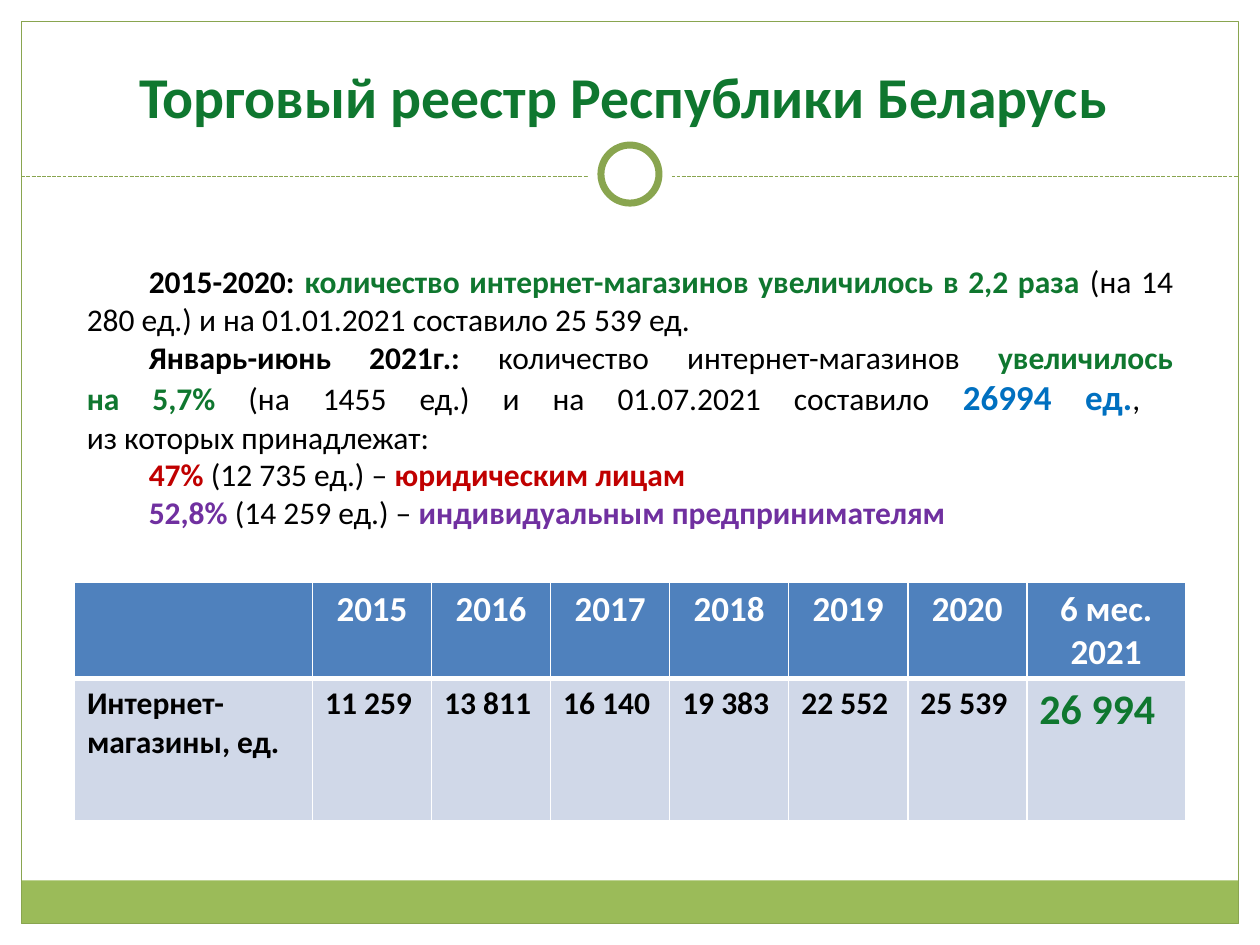
from lxml.etree import SubElement
from pptx import Presentation
from pptx.dml.color import RGBColor
from pptx.enum.dml import MSO_LINE
from pptx.enum.shapes import MSO_CONNECTOR, MSO_SHAPE
from pptx.enum.text import MSO_ANCHOR, MSO_AUTO_SIZE, PP_ALIGN
from pptx.oxml import parse_xml
from pptx.oxml.ns import nsdecls, qn
from pptx.util import Cm, Pt

COLORS = {
    "white": "FFFFFF", "black": "000000", "olive": "9BBB59", "frame": "89A54F",
    "green": "0F772F", "blue": "0070C0", "red": "C00000", "purple": "7030A0",
    "header": "4F81BD", "body": "D0D8E8",
}


def rgb(name):
    return RGBColor.from_string(COLORS[name])


class SlideBuilder:
    font_name = "Calibri"

    def __init__(self, slide):
        self.slide = slide

    def style_font(self, font, size, color, bold):
        font.name, font.size, font.bold = self.font_name, Pt(size), bold
        font.color.rgb = rgb(color)

    def shape(self, kind, box, fill=None, line=None, width=0.75):
        shape = self.slide.shapes.add_shape(kind, *map(Cm, box))
        shape.shadow.inherit = False
        if fill:
            shape.fill.solid()
            shape.fill.fore_color.rgb = rgb(fill)
        else:
            shape.fill.background()
        if line:
            shape.line.color.rgb = rgb(line)
            shape.line.width = Pt(width)
        else:
            shape.line.fill.background()

    def dashed_line(self, x1, y1, x2, y2):
        line = self.slide.shapes.add_connector(
            MSO_CONNECTOR.STRAIGHT, Cm(x1), Cm(y1), Cm(x2), Cm(y2))
        line.line.color.rgb = rgb("frame")
        line.line.width = Pt(0.75)
        line.line.dash_style = MSO_LINE.SQUARE_DOT
        SubElement(line._element.spPr, qn("a:effectLst"))

    def text_frame(self, box):
        frame = self.slide.shapes.add_textbox(*map(Cm, box)).text_frame
        frame.word_wrap = True
        return frame

    def title(self, text, box):
        frame = self.text_frame(box)
        frame.vertical_anchor = MSO_ANCHOR.BOTTOM
        paragraph = frame.paragraphs[0]
        paragraph.text = text
        paragraph.alignment = PP_ALIGN.CENTER
        self.style_font(paragraph.font, 33, "green", True)

    def body_text(self, paragraphs, box):
        """Each run is (text, color, bold[, size])."""
        frame = self.text_frame(box)
        frame.auto_size = MSO_AUTO_SIZE.SHAPE_TO_FIT_TEXT
        for index, runs in enumerate(paragraphs):
            paragraph = frame.add_paragraph() if index else frame.paragraphs[0]
            paragraph.alignment = PP_ALIGN.JUSTIFY
            paragraph._p.get_or_add_pPr().set("indent", str(Cm(1.25)))
            for text, color, bold, *size in runs:
                for number, part in enumerate(text.split("\n")):
                    if number:
                        paragraph.add_line_break()
                    run = paragraph.add_run()
                    run.text = part
                    self.style_font(run.font, size[0] if size else 18, color, bold)

    def cell(self, cell, text, fill, size, color, alignment, borders):
        cell.fill.solid()
        cell.fill.fore_color.rgb = rgb(fill)
        paragraph = cell.text_frame.paragraphs[0]
        paragraph.text = text
        paragraph.alignment = alignment
        self.style_font(paragraph.font, size, color, True)
        properties = cell._tc.get_or_add_tcPr()
        for index, (side, width) in enumerate(zip("LRTB", borders)):
            properties.insert(index, parse_xml(
                f'<a:ln{side} {nsdecls("a")} w="{Pt(width)}"><a:solidFill>'
                f'<a:srgbClr val="{COLORS["white"]}"/></a:solidFill></a:ln{side}>'))

    def table(self, header, values, left, top, widths, heights):
        table = self.slide.shapes.add_table(
            2, len(widths), Cm(left), Cm(top), Cm(sum(widths)), Cm(sum(heights))).table
        for row, height in zip(table.rows, heights):
            row.height = Cm(height)
        last = len(widths) - 1
        for index, width in enumerate(widths):
            table.columns[index].width = Cm(width)
            self.cell(table.cell(0, index), header[index], "header", 20, "white",
                      PP_ALIGN.CENTER, (1, 1, 1, 3))
            size, color = (24, "green") if index == last else (18, "black")
            self.cell(table.cell(1, index), values[index], "body", size, color,
                      PP_ALIGN.LEFT, (1, 1, 3, 1))


def main():
    presentation = Presentation()
    presentation.slide_width, presentation.slide_height = Cm(25.4), Cm(19.05)
    builder = SlideBuilder(presentation.slides.add_slide(presentation.slide_layouts[6]))

    # Margins, bottom band and frame
    margin = 0.43
    inner = 25.4 - 2 * margin
    for box in ((0, 0, 25.4, 3.86), (0, 0, margin, 19.05),
                (25.4 - margin, 0, margin, 19.05)):
        builder.shape(MSO_SHAPE.RECTANGLE, box, "white")
    builder.shape(MSO_SHAPE.RECTANGLE, (margin, 17.75, inner, 0.87), "olive")
    builder.shape(MSO_SHAPE.RECTANGLE, (margin, margin, inner, 18.19), line="frame")

    # Divider with a ring in the middle
    builder.dashed_line(margin, 3.56, 25.4 - margin, 3.56)
    for diameter, line in ((1.7, None), (1.17, "frame")):
        box = (12.7 - diameter / 2, 3.51 - diameter / 2, diameter, diameter)
        builder.shape(MSO_SHAPE.OVAL, box, "white", line, 4)

    builder.title("Торговый реестр Республики Беларусь ", (0.85, 0.64, 23.7, 2.1))

    # Yearly figures
    builder.table(
        ["", "2015", "2016", "2017", "2018", "2019", "2020", "6 мес. 2021"],
        ["Интернет-магазины, ед.", "11 259", "13 811", "16 140", "19 383",
         "22 552", "25 539", "26 994"],
        1.5, 11.73, [4.8] + [2.4] * 6 + [3.2], [1.95, 2.87])

    # Summary
    builder.body_text([
        [("2015-2020: ", "black", True),
         ("количество интернет-магазинов увеличилось в 2,2 раза", "green", True),
         (" (на 14 280 ед.) и на 01.01.2021 составило 25 539 ед. ", "black", False)],
        [("Январь-июнь 2021г.:", "black", True),
         (" количество интернет-магазинов ", "black", False),
         ("увеличилось\nна 5,7%", "green", True),
         (" (на 1455 ед.) и на 01.07.2021 составило ", "black", False),
         ("26994 ед.", "blue", True, 20),
         (", \nиз которых принадлежат:", "black", False)],
        [("47%", "red", True), (" (12 735 ед.) – ", "black", False),
         ("юридическим лицам", "red", True)],
        [("52,8%", "purple", True), (" (14 259 ед.) – ", "black", False),
         ("индивидуальным предпринимателям", "purple", True)],
    ], (1.5, 5.16, 22.4, 5.74))

    presentation.save("out.pptx")


if __name__ == "__main__":
    main()
